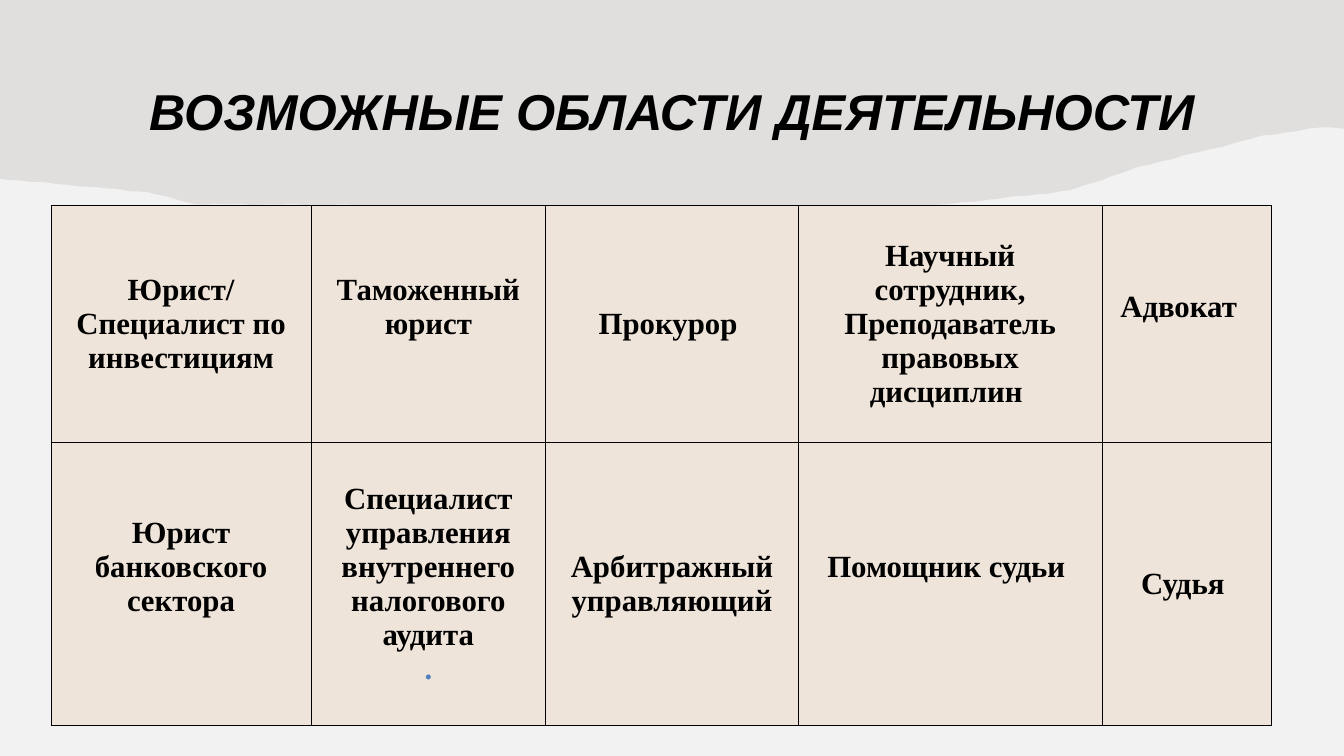
from dataclasses import dataclass
from math import sin

from lxml.etree import SubElement
from pptx import Presentation
from pptx.dml.color import RGBColor
from pptx.enum.text import MSO_ANCHOR as Anchor, PP_ALIGN as Align
from pptx.oxml.ns import qn
from pptx.util import Inches, Pt


@dataclass(frozen=True)
class Theme:
    background: str = "F2F2F2"
    torn_paper: str = "82766A"
    torn_paper_alpha: int = 15
    text: str = "000000"
    accent: str = "4F81BD"
    cell: str = "EEE4DA"
    border: str = "000000"
    border_width: float = 1
    title_font: str = "Arial"
    cell_font: str = "Times New Roman"
    title_size: float = 54
    cell_size: float = 33


@dataclass(frozen=True)
class Career:
    name: str
    raised_by: float = 0
    shifted_left_by: float = 0
    accent_line: str = ""


THEME = Theme()
HALF_LINE = 0.25

TITLE = "ВОЗМОЖНЫЕ ОБЛАСТИ ДЕЯТЕЛЬНОСТИ"
CAREERS = [
    [
        Career("Юрист/\nСпециалист по инвестициям"),
        Career("Таможенный юрист", raised_by=HALF_LINE),
        Career("Прокурор "),
        Career("Научный сотрудник, Преподаватель правовых дисциплин "),
        Career("Адвокат", raised_by=HALF_LINE, shifted_left_by=0.12),
    ],
    [
        Career("Юрист банковского сектора", raised_by=HALF_LINE),
        Career("Специалист управления внутреннего налогового аудита", accent_line="."),
        Career("Арбитражный управляющий"),
        Career("Помощник судьи ", raised_by=HALF_LINE),
        Career("Судья "),
    ],
]

SLIDE_WIDTH, SLIDE_HEIGHT = 20, 11.25
TITLE_TOP, TITLE_WIDTH, TITLE_HEIGHT = 0.81, 17.28, 1.34
TABLE_LEFT, TABLE_TOP = 0.76, 3.06
COLUMN_WIDTHS = (3.87, 3.49, 3.76, 4.52, 2.52)
ROW_HEIGHTS = (3.52, 4.22)
SIDE_MARGIN, END_MARGIN = 0.12, 0.06

EDGE_BENDS = [
    (0, 2.66), (2.2, 2.86), (2.9, 3.04), (5.3, 3.05), (10, 3.4), (13.2, 3.14),
    (15.9, 2.84), (17, 2.47), (18.1, 2.2), (18.8, 2.02), (19.7, 1.89), (20, 1.91),
]
EDGE_STEP, EDGE_ROUGHNESS = 0.1, 0.01


def edge_height(x):
    for (left, start), (right, end) in zip(EDGE_BENDS, EDGE_BENDS[1:]):
        if x <= right:
            smooth = start + (end - start) * (x - left) / (right - left)
            return smooth + EDGE_ROUGHNESS * (sin(7 * x) + sin(17 * x)) / 2


def paint(fill, color):
    fill.solid()
    fill.fore_color.rgb = RGBColor.from_string(color)


def style_paragraph(paragraph, font_name, size, color, italic=False):
    paragraph.alignment = Align.CENTER
    font = paragraph.font
    font.name, font.size = font_name, Pt(size)
    font.bold, font.italic = True, italic
    font.color.rgb = RGBColor.from_string(color)


def add_torn_paper(slide):
    step_count = round(SLIDE_WIDTH / EDGE_STEP)
    edge = [(SLIDE_WIDTH * step / step_count) for step in range(step_count, -1, -1)]
    outline = [(SLIDE_WIDTH, 0)] + [(x, edge_height(x)) for x in edge]
    builder = slide.shapes.build_freeform(0, 0)
    builder.add_line_segments([(Inches(x), Inches(y)) for x, y in outline], close=True)
    shape = builder.convert_to_shape()
    shape.shadow.inherit = False
    shape.line.fill.background()
    paint(shape.fill, THEME.torn_paper)
    color = shape.element.spPr.find(qn("a:solidFill"))[0]
    SubElement(color, qn("a:alpha"), val=str(THEME.torn_paper_alpha * 1000))


def add_title(slide):
    left = (SLIDE_WIDTH - TITLE_WIDTH) / 2
    box = map(Inches, (left, TITLE_TOP, TITLE_WIDTH, TITLE_HEIGHT))
    frame = slide.shapes.add_textbox(*box).text_frame
    frame.word_wrap = True
    frame.vertical_anchor = Anchor.BOTTOM
    paragraph = frame.paragraphs[0]
    paragraph.text = TITLE
    paragraph.line_spacing = 0.9
    paragraph.space_after = Pt(6)
    style_paragraph(paragraph, THEME.title_font, THEME.title_size, THEME.text, italic=True)


def add_borders(cell):
    properties = cell._tc.get_or_add_tcPr()
    for index, side in enumerate(("lnL", "lnR", "lnT", "lnB")):
        line = SubElement(properties, qn(f"a:{side}"), w=str(Pt(THEME.border_width)))
        properties.insert(index, line)
        fill = SubElement(line, qn("a:solidFill"))
        SubElement(fill, qn("a:srgbClr"), val=THEME.border)


def fill_cell(cell, career):
    paint(cell.fill, THEME.cell)
    add_borders(cell)
    cell.vertical_anchor = Anchor.MIDDLE
    cell.margin_left = Inches(SIDE_MARGIN)
    cell.margin_right = Inches(SIDE_MARGIN + 2 * career.shifted_left_by)
    cell.margin_top = Inches(END_MARGIN)
    cell.margin_bottom = Inches(END_MARGIN + 2 * career.raised_by)
    frame = cell.text_frame
    frame.text = career.name
    for paragraph in frame.paragraphs:
        style_paragraph(paragraph, THEME.cell_font, THEME.cell_size, THEME.text)
    if career.accent_line:
        paragraph = frame.add_paragraph()
        paragraph.text = career.accent_line
        style_paragraph(paragraph, THEME.cell_font, THEME.cell_size, THEME.accent)


def add_careers_table(slide):
    box = map(Inches, (TABLE_LEFT, TABLE_TOP, sum(COLUMN_WIDTHS), sum(ROW_HEIGHTS)))
    table = slide.shapes.add_table(len(ROW_HEIGHTS), len(COLUMN_WIDTHS), *box).table
    table.first_row = table.horz_banding = False
    for column, width in zip(table.columns, COLUMN_WIDTHS):
        column.width = Inches(width)
    for row, height, careers in zip(table.rows, ROW_HEIGHTS, CAREERS):
        row.height = Inches(height)
        for cell, career in zip(row.cells, careers):
            fill_cell(cell, career)


def main():
    presentation = Presentation()
    presentation.slide_width = Inches(SLIDE_WIDTH)
    presentation.slide_height = Inches(SLIDE_HEIGHT)
    slide = presentation.slides.add_slide(presentation.slide_layouts[6])
    paint(slide.background.fill, THEME.background)
    add_torn_paper(slide)
    add_title(slide)
    add_careers_table(slide)
    presentation.save("out.pptx")


if __name__ == "__main__":
    main()
